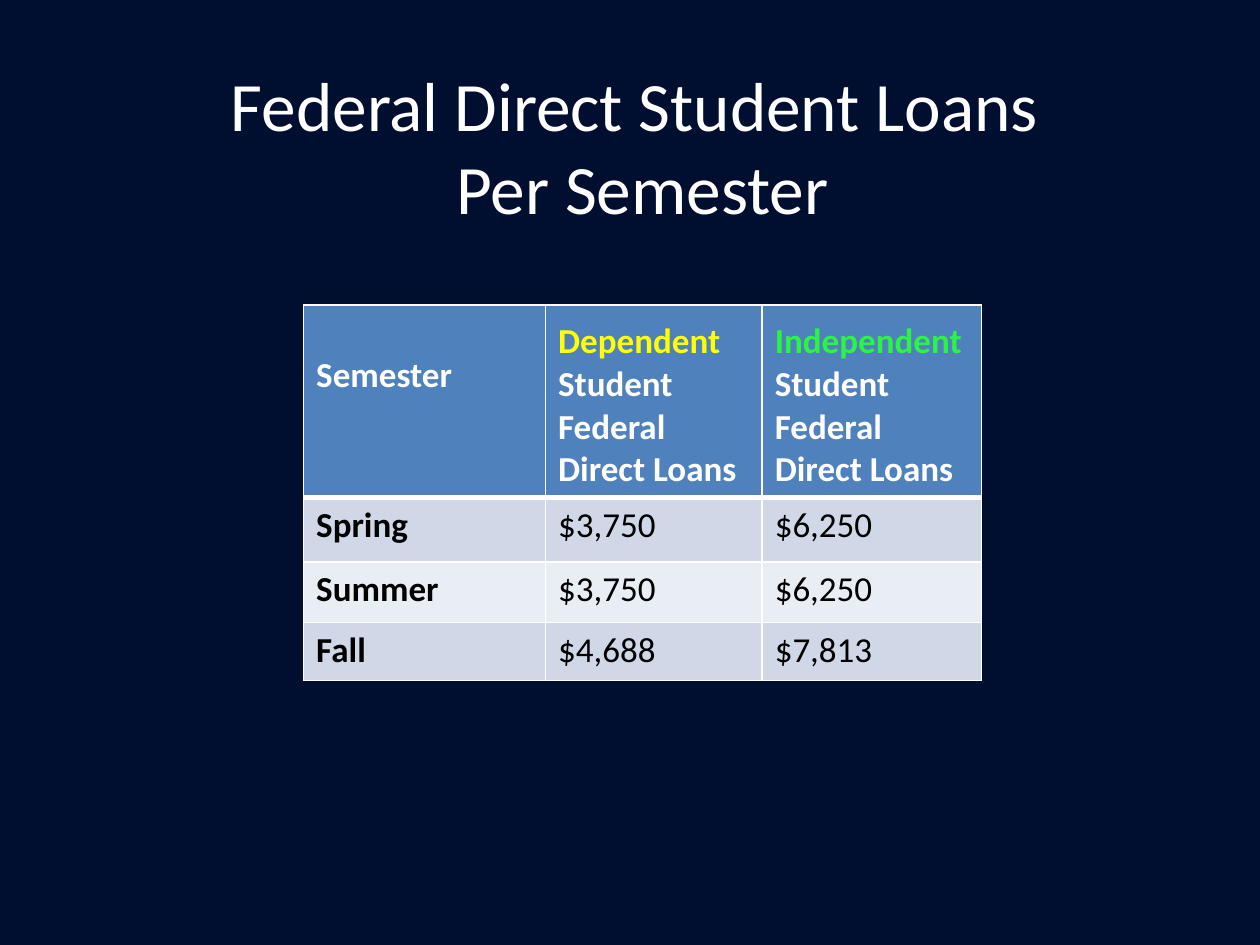
from lxml.etree import SubElement
from pptx import Presentation
from pptx.dml.color import RGBColor
from pptx.enum.text import MSO_ANCHOR, PP_ALIGN
from pptx.oxml.ns import qn
from pptx.util import Pt

FONT = "Calibri"
COLORS = {
    "background": "000E2F",
    "white": "FFFFFF",
    "black": "000000",
    "header": "4F81BD",
    "odd_band": "D0D8E8",
    "even_band": "E9EDF4",
    "dependent": "FFFF00",
    "independent": "2CF444",
}
COLUMN_WIDTHS = [138.24, 123.84, 125.28]
ROW_HEIGHTS = [110.16, 36.72, 34.56, 33.12]
HEADERS = [
    [[("Semester", "white")]],
    [[("Dependent", "dependent"), (" Student Federal Direct Loans", "white")]],
    [
        [("Independent ", "independent"), ("Student Federal", "white")],
        [("Direct Loans", "white")],
    ],
]
LOANS = [
    ("Spring", "$3,750", "$6,250"),
    ("Summer", "$3,750", "$6,250"),
    ("Fall", "$4,688", "$7,813"),
]


def color(name):
    return RGBColor.from_string(COLORS[name])


def style_span(span, size, color_name, bold=False):
    span.font.name = FONT
    span.font.size = Pt(size)
    span.font.bold = bold
    span.font.color.rgb = color(color_name)


def add_title(page, text):
    box = page.shapes.add_textbox(Pt(25.2), Pt(38.16), Pt(684), Pt(90))
    frame = box.text_frame
    frame.word_wrap = True
    frame.vertical_anchor = MSO_ANCHOR.MIDDLE
    para = frame.paragraphs[0]
    para.text = text
    para.alignment = PP_ALIGN.CENTER
    for span in para.runs:
        style_span(span, 39.6, "white")


def set_borders(cell, widths):
    properties = cell._tc.get_or_add_tcPr()
    for index, (side, width) in enumerate(widths.items()):
        line = properties.makeelement(qn(f"a:{side}"), {"w": str(Pt(width))})
        fill = SubElement(line, qn("a:solidFill"))
        SubElement(fill, qn("a:srgbClr"), val=COLORS["white"])
        properties.insert(index, line)


def fill_cell(cell, paragraphs, fill_name, bold, top=1, bottom=1):
    cell.fill.solid()
    cell.fill.fore_color.rgb = color(fill_name)
    set_borders(cell, {"lnL": 1, "lnR": 1, "lnT": top, "lnB": bottom})
    frame = cell.text_frame
    for index, spans in enumerate(paragraphs):
        para = frame.add_paragraph() if index else frame.paragraphs[0]
        for text, color_name in spans:
            span = para.add_run()
            span.text = text
            style_span(span, 20, color_name, bold)


def add_loan_table(page):
    frame = page.shapes.add_table(
        len(ROW_HEIGHTS), len(COLUMN_WIDTHS), Pt(173.52), Pt(174.24),
        Pt(sum(COLUMN_WIDTHS)), Pt(sum(ROW_HEIGHTS)))
    table = frame.table
    for column, width in zip(table.columns, COLUMN_WIDTHS):
        column.width = Pt(width)
    for row, height in zip(table.rows, ROW_HEIGHTS):
        row.height = Pt(height)

    for column, paragraphs in enumerate(HEADERS):
        cell = table.cell(0, column)
        fill_cell(cell, paragraphs, "header", True, bottom=3)
        if column:
            cell.vertical_anchor = MSO_ANCHOR.BOTTOM
        else:
            cell.margin_top = Pt(28)

    for row, values in enumerate(LOANS, start=1):
        band = "odd_band" if row % 2 else "even_band"
        for column, value in enumerate(values):
            fill_cell(table.cell(row, column), [[(value, "black")]], band,
                      column == 0, top=3 if row == 1 else 1)


def main():
    deck = Presentation()
    deck.slide_width, deck.slide_height = Pt(720), Pt(540)
    page = deck.slides.add_slide(deck.slide_layouts[6])
    page.background.fill.solid()
    page.background.fill.fore_color.rgb = color("background")
    add_title(page, "Federal Direct Student Loans \nPer Semester")
    add_loan_table(page)
    deck.save("out.pptx")


if __name__ == "__main__":
    main()
